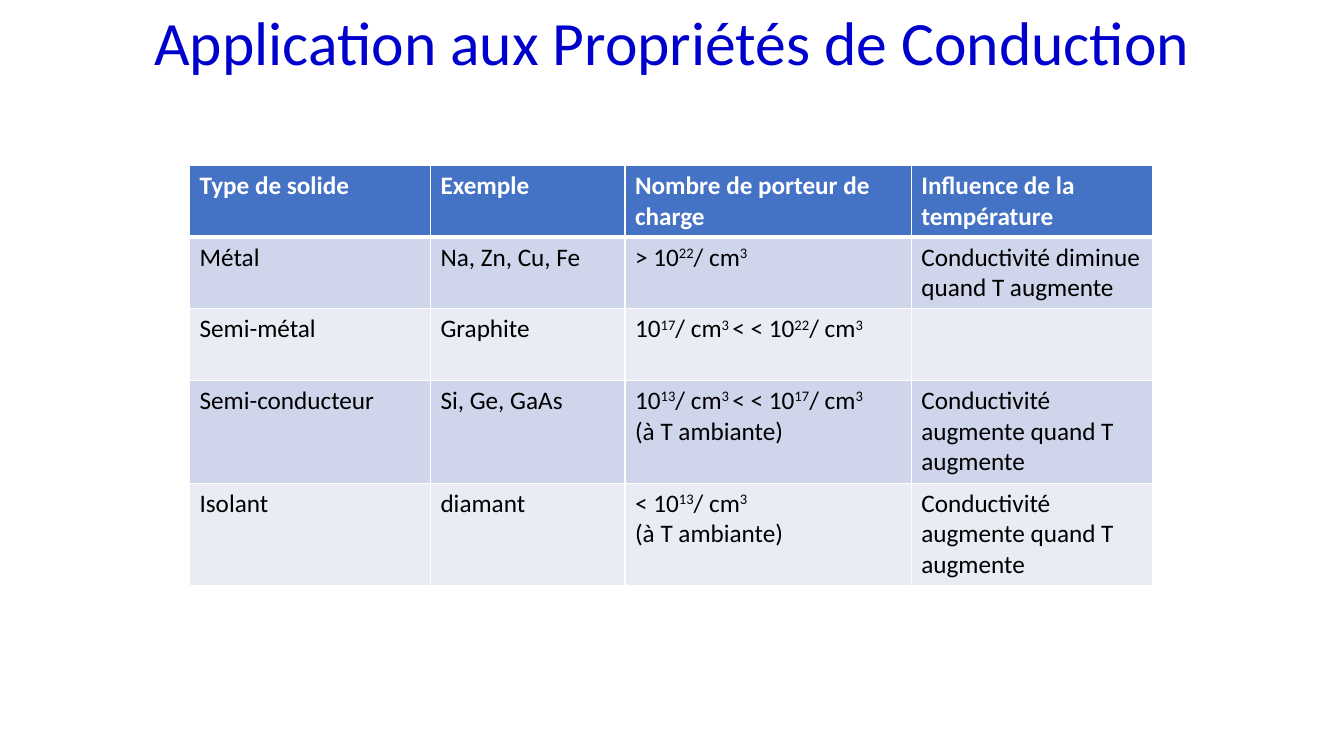
from pptx import Presentation
from pptx.dml.color import RGBColor
from pptx.enum.text import MSO_ANCHOR, PP_ALIGN
from pptx.oxml import parse_xml
from pptx.oxml.ns import nsdecls
from pptx.util import Inches, Pt

MIDDLE = MSO_ANCHOR.MIDDLE
CENTER = PP_ALIGN.CENTER

NAVY = RGBColor(0x00, 0x00, 0xCC)
BLUE = RGBColor(0x44, 0x72, 0xC4)
DARK = RGBColor(0xCF, 0xD5, 0xEA)
LIGHT = RGBColor(0xE9, 0xEB, 0xF5)
WHITE = RGBColor(0xFF, 0xFF, 0xFF)
BLACK = RGBColor(0x00, 0x00, 0x00)

FONT = "Calibri"
HEAD = {"name": FONT, "size": Pt(18), "bold": True, "color": WHITE}
BODY = {"name": FONT, "size": Pt(18), "bold": False, "color": BLACK}
TITLE = {"name": FONT, "size": Pt(44), "bold": False, "color": NAVY}


class Deck:
    """Holds the style and the current slide; the grid is 100 by 100."""

    def __init__(self):
        self.prs = Presentation()
        self.prs.slide_width = Inches(13.33)
        self.prs.slide_height = Inches(7.5)
        self.slide = self.prs.slides.add_slide(self.prs.slide_layouts[5])

    def col(self, n):
        return int(self.prs.slide_width * n / 100)

    def row(self, n):
        return int(self.prs.slide_height * n / 100)

    def style(self, font, look):
        for key, value in look.items():
            if key == "color":
                font.color.rgb = value
            else:
                setattr(font, key, value)

    def text(self, frame, words, look):
        """Lines become paragraphs; words between carets are raised."""
        for i, line in enumerate(words.split("\n")):
            para = frame.add_paragraph() if i else frame.paragraphs[0]
            self.style(para.font, look)
            for j, part in enumerate(line.split("^")):
                if not part:
                    continue
                run = para.add_run()
                run.text = part
                self.style(run.font, look)
                if j % 2:
                    run._r.get_or_add_rPr().set("baseline", "30000")

    def title(self, words, x, y, w, h):
        box = self.slide.shapes.title
        place = {"left": self.col(x), "top": self.row(y),
                 "width": self.col(w), "height": self.row(h)}
        for key, value in place.items():
            setattr(box, key, value)
        frame = box.text_frame
        frame.vertical_anchor = MIDDLE
        self.text(frame, words, TITLE)
        para = frame.paragraphs[0]
        para.alignment = CENTER
        para.line_spacing = 0.9

    def edges(self, cell, top, bottom):
        widths = {"lnL": 1, "lnR": 1, "lnT": top, "lnB": bottom}
        for i, (side, width) in enumerate(widths.items()):
            line = parse_xml(
                f'<a:{side} {nsdecls("a")} w="{Pt(width)}"><a:solidFill>'
                f'<a:srgbClr val="{WHITE}"/></a:solidFill></a:{side}>')
            cell._tc.get_or_add_tcPr().insert(i, line)

    def table(self, data, x, y, cols, rows):
        grid = self.slide.shapes.add_table(
            len(rows), len(cols), self.col(x), self.row(y),
            self.col(sum(cols)), self.row(sum(rows))).table
        for c, width in enumerate(cols):
            grid.columns[c].width = self.col(width)
        for r, height in enumerate(rows):
            grid.rows[r].height = self.row(height)
            tint = (DARK if r % 2 else LIGHT) if r else BLUE
            for c, words in enumerate(data[r]):
                cell = grid.cell(r, c)
                cell.fill.solid()
                cell.fill.fore_color.rgb = tint
                self.edges(cell, 3 if r == 1 else 1, 1 if r else 3)
                self.text(cell.text_frame, words, BODY if r else HEAD)


RISE = "Conductivité augmente quand T augmente"
ROOM = "(à T ambiante)"
SOLIDS = [
    ("Type de solide", "Exemple", "Nombre de porteur de charge",
     "Influence de la température"),
    ("Métal", "Na, Zn, Cu, Fe", "> 10^22^/ cm^3^",
     "Conductivité diminue quand T augmente"),
    ("Semi-métal", "Graphite", "10^17^/ cm^3 ^< < 10^22^/ cm^3^", ""),
    ("Semi-conducteur", "Si, Ge, GaAs",
     f"10^13^/ cm^3 ^< < 10^17^/ cm^3^\n{ROOM}", RISE),
    ("Isolant", "diamant", f"< 10^13^/ cm^3^\n{ROOM}", RISE),
]

deck = Deck()

# Heading
deck.title("Application aux Propriétés de Conduction", 6.9, 0.27, 86.27, 11.47)

# Kinds of solid
deck.table(SOLIDS, 14.1, 21.87, cols=[17.93, 14.48, 21.3, 17.93],
           rows=[9.45, 9.45, 9.5, 13.6, 13.6])

deck.prs.save("out.pptx")
